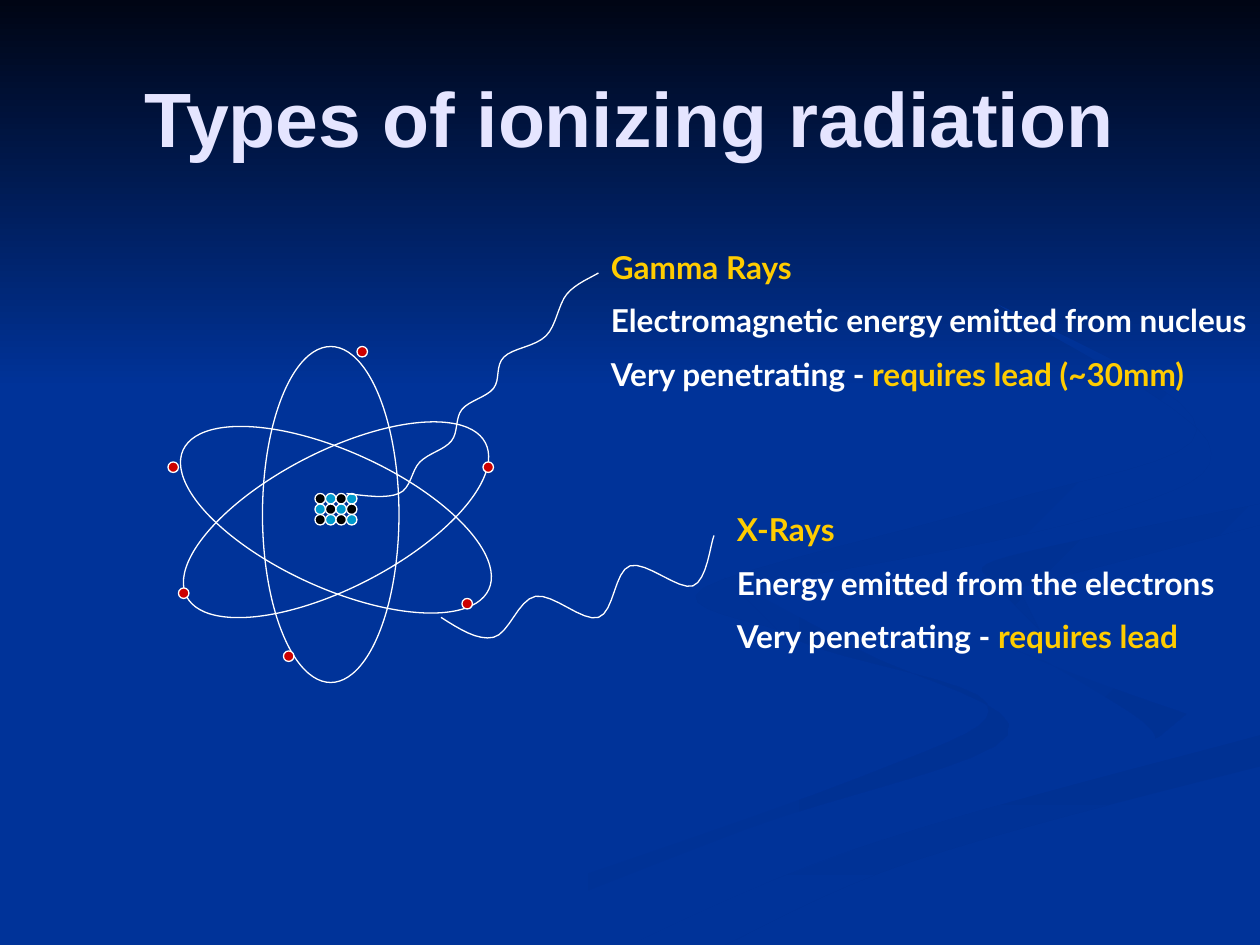
from itertools import product

from pptx import Presentation
from pptx.dml.color import RGBColor
from pptx.enum.shapes import MSO_SHAPE
from pptx.enum.text import MSO_ANCHOR, PP_ALIGN
from pptx.util import Inches, Pt

NAVY = RGBColor(0x00, 0x33, 0x99)
SHADE = RGBColor(0x00, 0x31, 0x93)
MIDNIGHT = RGBColor(0x00, 0x05, 0x14)
LAVENDER = RGBColor(0xE5, 0xE5, 0xFF)
WHITE = RGBColor(0xFF, 0xFF, 0xFF)
BLACK = RGBColor(0x00, 0x00, 0x00)
BLUE = RGBColor(0x00, 0x99, 0xCC)
RED = RGBColor(0xCC, 0x00, 0x00)
GOLD = RGBColor(0xFF, 0xCC, 0x00)

CREST = [(60, 90), (84, 80), (120, 70)]
BEND = [(87, 56), (97, 62), (113, 68)]
SHORE = [(120, 48), (96, 53), (94, 55)]
RIBBONS = [
    ([[(69, 55), (76, 61), (94, 67), (82, 74), (36, 90)],
      [(43, 90), (71, 79), (96, 70), (82, 62), (69, 55)]], (NAVY, SHADE), 0),
    ([[(87, 56), (103, 65), (110, 70), (107, 73)], BEND[::-1]], (NAVY, SHADE), 45),
    ([CREST, [(120, 73), (87, 82), (69, 90)]], (SHADE, NAVY), 90),
    ([[*BEND, (97, 75), (57, 90)], CREST, [(120, 65), (98, 59), *SHORE[1::-1]],
      [(120, 46), (92, 51), (87, 56)]], (NAVY,), 0),
    ([[(94, 55), (99, 60)], [(97, 56), (120, 50)], SHORE], (SHADE, NAVY), 45),
    ([[(95, 29), (114, 41), (95, 48), (67, 56), (74, 60)],
      [(70, 56), (105, 49), (115, 42), (95, 29)]], (SHADE, NAVY), 45),
]
GAMMA_WAVE = [(33, 47), (38, 47), (40, 44), (43, 42), (44, 39), (47, 37), (48, 34),
              (52, 32), (54, 28), (57, 26)]
XRAY_WAVE = [(42, 58.8), (47, 60.7), (51, 56.8), (57, 58.8), (60, 53.9), (66, 55.8),
             (68, 51)]
ELECTRONS = [(34, 33), (46, 44), (44, 57), (27, 62), (16, 44), (17, 56)]


def smooth_curve(knots, steps=8):
    """Return points on a smooth curve through the knots."""
    knots = [knots[0], *knots, knots[-1]]
    points = [knots[0]]
    for before, start, end, after in zip(knots, knots[1:], knots[2:], knots[3:]):
        arrive = [e - (a - s) / 6 for s, e, a in zip(start, end, after)]
        leave = [s + (e - b) / 6 for b, s, e in zip(before, start, end)]
        if before == start:
            leave = [(s + c) / 2 for s, c in zip(start, arrive)]
        for step in range(1, steps + 1):
            t = step / steps
            u = 1 - t
            points.append(tuple(
                u**3 * s + 3 * u * u * t * l + 3 * u * t * t * c + t**3 * e
                for s, l, c, e in zip(start, leave, arrive, end)))
    return points


class AtomSlide:
    """Draws styled elements on a slide grid of 120 columns by 90 rows."""

    def __init__(self, presentation):
        self.slide = presentation.slides.add_slide(presentation.slide_layouts[6])
        self.cell = presentation.slide_width / 120
        fill = self.slide.background.fill
        fill.solid()
        fill.fore_color.rgb = NAVY

    def lengths(self, *cells):
        return [round(cell * self.cell) for cell in cells]

    def style(self, shape, colors=(), angle=0, outlined=True):
        shape.shadow.inherit = False
        if len(colors) == 2:
            shape.fill.gradient()
            shape.fill.gradient_angle = (360 - angle) % 360
            for stop, color in zip(shape.fill.gradient_stops, colors):
                stop.color.rgb = color
        elif colors:
            shape.fill.solid()
            shape.fill.fore_color.rgb = colors[0]
        else:
            shape.fill.background()
        if outlined:
            shape.line.color.rgb = WHITE
            shape.line.width = Pt(0.75)
        else:
            shape.line.fill.background()

    def preset(self, kind, box, colors=(), angle=0, rotation=0, outlined=True):
        shape = self.slide.shapes.add_shape(kind, *self.lengths(*box))
        shape.rotation = rotation
        self.style(shape, colors, angle, outlined)

    def particle(self, column, row, color):
        self.preset(MSO_SHAPE.FLOWCHART_CONNECTOR, (column, row, 1, 1), (color,))

    def outline(self, points, closed):
        points = [self.lengths(*point) for point in points]
        builder = self.slide.shapes.build_freeform(*points[0])
        builder.add_line_segments(points[1:], close=closed)
        return builder.convert_to_shape()

    def ribbon(self, edges, colors, angle):
        points = [point for edge in edges for point in smooth_curve(edge)]
        self.style(self.outline(points, True), colors, angle, False)

    def wave(self, knots):
        self.style(self.outline(smooth_curve(knots), False))

    def text(self, box, lines, size, font, align=PP_ALIGN.LEFT, anchor=MSO_ANCHOR.TOP):
        frame = self.slide.shapes.add_textbox(*self.lengths(*box)).text_frame
        frame.word_wrap = True
        frame.vertical_anchor = anchor
        for index, line in enumerate(lines):
            paragraph = frame.add_paragraph() if index else frame.paragraphs[0]
            paragraph.alignment = align
            paragraph.space_before = Pt(size / 2 if index else 0)
            for words, color in line:
                run = paragraph.add_run()
                run.text = words
                run.font.name = font
                run.font.size = Pt(size)
                run.font.bold = True
                run.font.color.rgb = color

    def ray_notes(self, box, name, origin, shield):
        lines = [[(name, GOLD)], [(origin, WHITE)],
                 [("Very penetrating - ", WHITE), (shield, GOLD)]]
        self.text(box, lines, 18, "Lato")


def main():
    presentation = Presentation()
    presentation.slide_width, presentation.slide_height = Inches(10), Inches(7.5)
    slide = AtomSlide(presentation)
    slide.preset(MSO_SHAPE.RECTANGLE, (0, 0, 120, 37), (MIDNIGHT, NAVY), 90, outlined=False)
    for edges, colors, angle in RIBBONS:
        slide.ribbon(edges, colors, angle)
    slide.text((6, 3.6, 108, 15), [[("Types of ionizing radiation", LAVENDER)]], 44,
               "Arial", PP_ALIGN.CENTER, MSO_ANCHOR.MIDDLE)
    for offset, rotation in ((0.5, 62.8), (0.5, 294.5), (0, 0)):
        slide.preset(MSO_SHAPE.OVAL, (25 + offset, 33 + offset, 13, 32), rotation=rotation)
    for row, column in product(range(3), range(4)):
        slide.particle(30 + column, 47 + row, BLUE if (row + column) % 2 else BLACK)
    for column, row in ELECTRONS:
        slide.particle(column, row, RED)
    slide.wave(GAMMA_WAVE)
    slide.ray_notes((57, 23, 63, 23), "Gamma Rays",
                    "Electromagnetic energy emitted from nucleus", "requires lead (~30mm)")
    slide.wave(XRAY_WAVE)
    slide.ray_notes((69, 48, 48, 23), "X-Rays",
                    "Energy emitted from the electrons", "requires lead")
    presentation.save("out.pptx")


if __name__ == "__main__":
    main()
